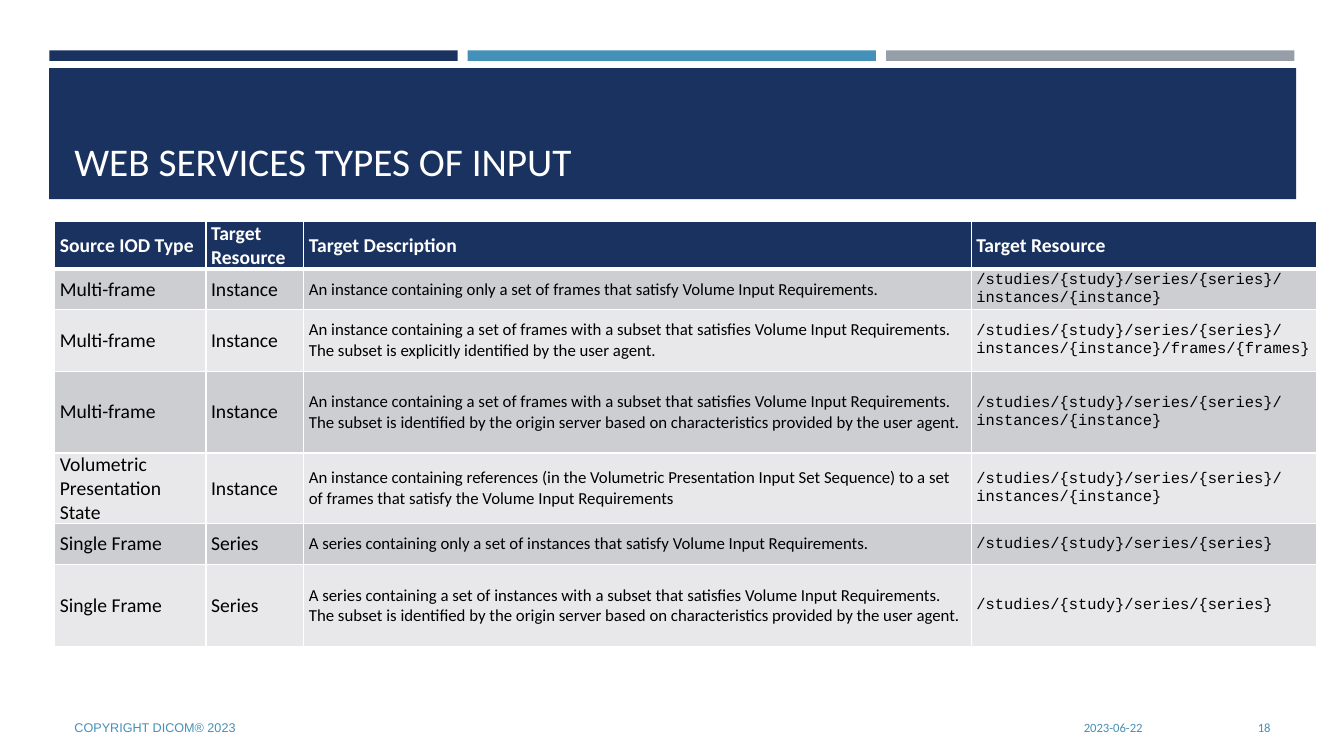
from lxml import etree
from pptx import Presentation, util as u
from pptx.dml.color import RGBColor
from pptx.enum import shapes, text
from pptx.oxml.ns import qn

NAVY, BLUE, GRAY = "1A3260", "4590B8", "969FA7"
WHITE, BLACK = "FFFFFF", "000000"
BANDS = ("CDCED2", "E8E8EA")
LEFT, RIGHT = text.PP_ALIGN.LEFT, text.PP_ALIGN.RIGHT
MIDDLE, BOTTOM = text.MSO_ANCHOR.MIDDLE, text.MSO_ANCHOR.BOTTOM

SUBSET = ("An instance containing a set of frames with a subset that satisfies "
          "Volume Input Requirements.\n")
SERVER = ("The subset is identified by the origin server based on "
          "characteristics provided by the user agent.")
SERIES = "/studies/{study}/series/{series}"
INSTANCE = SERIES + "/instances/{instance}"

HEADS = ("Source IOD Type", "Target\nResource", "Target Description", "Target Resource")
INPUTS = (
    ("Multi-frame", "Instance",
     "An instance containing only a set of frames that satisfy Volume Input Requirements.",
     INSTANCE),
    ("Multi-frame", "Instance",
     SUBSET + "The subset is explicitly identified by the user agent.",
     INSTANCE + "/frames/{frames}"),
    ("Multi-frame", "Instance", SUBSET + SERVER, INSTANCE),
    ("Volumetric Presentation State", "Instance",
     "An instance containing references (in the Volumetric Presentation Input Set "
     "Sequence) to a set of frames that satisfy the Volume Input Requirements",
     INSTANCE),
    ("Single Frame", "Series",
     "A series containing only a set of instances that satisfy Volume Input Requirements.",
     SERIES),
    ("Single Frame", "Series",
     "A series containing a set of instances with a subset that satisfies "
     "Volume Input Requirements.\n" + SERVER,
     SERIES),
)
COLS = (11.25, 7.28, 49.66, 25.73)
ROWS = (5.42, 5.42, 8.13, 10.83, 8.13, 5.42, 10.83)
FONTS = ((14, "Calibri"), (14, "Calibri"), (12, "Calibri"), (11, "Courier New"))


def rgb(code):
    return RGBColor.from_string(code)


class Page:
    """One slide; all lengths are percentages of its width and height."""

    def __init__(self, deck):
        self.wide, self.high = deck.slide_width, deck.slide_height
        self.slide = deck.slides.add_slide(deck.slide_layouts[6])

    def across(self, share):
        return int(self.wide * share / 100)

    def down(self, share):
        return int(self.high * share / 100)

    def frame(self, x, y, w, h):
        return self.across(x), self.down(y), self.across(w), self.down(h)

    def block(self, x, y, w, h, color):
        box = self.slide.shapes.add_shape(
            shapes.MSO_SHAPE.RECTANGLE, *self.frame(x, y, w, h))
        box.shadow.inherit = False
        box.fill.solid()
        box.fill.fore_color.rgb = rgb(color)
        box.line.fill.background()

    def style(self, body, words, size, face, color, bold=False, align=LEFT):
        """Put words in a text frame, one paragraph a line, in one font."""
        body.word_wrap = True
        body.text = words
        for para in body.paragraphs:
            para.alignment = align
            font = para.font
            font.size, font.name, font.bold = u.Pt(size), face, bold
            font.color.rgb = rgb(color)

    def label(self, x, y, w, h, words, size, face, color, align=LEFT, anchor=MIDDLE):
        body = self.slide.shapes.add_textbox(*self.frame(x, y, w, h)).text_frame
        self.style(body, words, size, face, color, align=align)
        body.vertical_anchor = anchor

    def edge(self, cell, side, width):
        line = etree.SubElement(cell._tc.get_or_add_tcPr(), qn("a:ln" + side),
                                w=str(u.Pt(width)))
        fill = etree.SubElement(line, qn("a:solidFill"))
        etree.SubElement(fill, qn("a:srgbClr"), val=WHITE)

    def cell(self, cell, words, size, face, color, fill, bold, top, base):
        for side, width in zip("LRTB", (1, 1, top, base)):
            self.edge(cell, side, width)
        cell.fill.solid()
        cell.fill.fore_color.rgb = rgb(fill)
        cell.margin_left = cell.margin_right = u.Inches(0.05)
        cell.margin_top = cell.margin_bottom = 0
        cell.vertical_anchor = MIDDLE
        self.style(cell.text_frame, words, size, face, color, bold)

    def table(self, x, y, cols, rows, data):
        grid = self.slide.shapes.add_table(
            len(rows), len(cols), *self.frame(x, y, sum(cols), sum(rows))).table
        for col, share in zip(grid.columns, cols):
            col.width = self.across(share)
        for row, share in zip(grid.rows, rows):
            row.height = self.down(share)
        for r, line in enumerate(data):
            head = r == 0
            fill = NAVY if head else BANDS[(r - 1) % 2]
            for c, words in enumerate(line):
                size, face = FONTS[0] if head else FONTS[c]
                self.cell(grid.cell(r, c), words, size, face,
                          WHITE if head else BLACK, fill, head,
                          top=3 if r == 1 else 1, base=3 if head else 1)


def main():
    deck = Presentation()
    deck.slide_width, deck.slide_height = u.Inches(13.33), u.Inches(7.5)
    page = Page(deck)

    for i, color in enumerate((NAVY, BLUE, GRAY)):
        page.block(3.67 + i * 31.13, 6.67, 30.38, 1.4, color)
    page.block(3.65, 9, 92.8, 17.33, NAVY)
    page.label(4.8, 10.27, 90.47, 14.8, "WEB SERVICES TYPES OF INPUT",
               28, "Calibri", WHITE, anchor=BOTTOM)

    page.table(4.08, 29.33, COLS, ROWS, (HEADS,) + INPUTS)

    for x, w, words, face, align in (
            (62.42, 23.33, "2023-06-22", "Calibri", RIGHT),
            (4.8, 56.71, "COPYRIGHT DICOM® 2023", "Arial", LEFT),
            (86.65, 8.63, "18", "Calibri", RIGHT)):
        page.label(x, 93.6, w, 5.33, words, 9, face, BLUE, align)

    deck.save("out.pptx")


if __name__ == "__main__":
    main()
